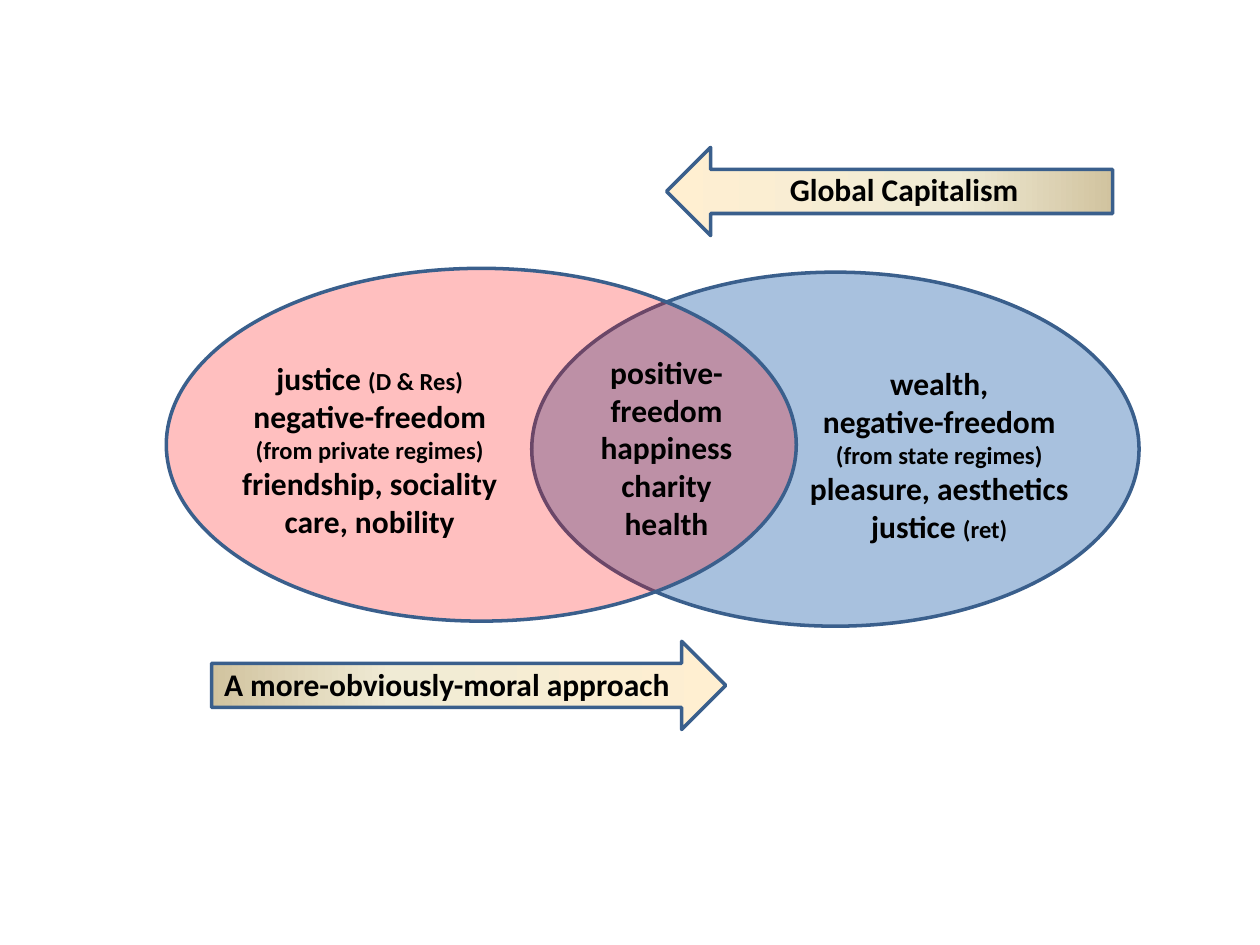
"""Build a slide with two overlapping value sets and two direction arrows."""
import pptx
import pptx.util
import pptx.dml.color
import pptx.enum.shapes
import pptx.enum.text
import pptx.oxml.ns
from lxml import etree

Inches = pptx.util.Inches
Pt = pptx.util.Pt
RGBColor = pptx.dml.color.RGBColor
SHAPE = pptx.enum.shapes.MSO_SHAPE
ALIGN = pptx.enum.text.PP_ALIGN
qn = pptx.oxml.ns.qn

BLUE = RGBColor(0x4F, 0x81, 0xBD)
RED = RGBColor(0xFF, 0x00, 0x00)
OUTLINE = RGBColor(0x3A, 0x5F, 0x8C)
BLACK = RGBColor(0x00, 0x00, 0x00)
CREAM = RGBColor(0xFF, 0xEF, 0xD1)
IVORY = RGBColor(0xF0, 0xEB, 0xD5)
TAN = RGBColor(0xD1, 0xC3, 0x9F)

LARGE, SMALL = 18, 14
ARROW_STOPS = [(0, CREAM), (65, IVORY), (100, TAN)]

ELLIPSES = [
    ((4.22, 2.16, 4.82, 2.81), BLUE, 49),
    ((1.32, 2.13, 5, 2.8), RED, 25),
]
ARROWS = [
    (SHAPE.RIGHT_ARROW, (1.68, 5.09, 4.08, 0.7), 180),
    (SHAPE.LEFT_ARROW, (5.29, 1.17, 3.54, 0.7), 0),
]
VALUE_LISTS = [
    ((6.17, 2.84, 2.57, 1.55), [
        [("wealth,", LARGE)],
        [("negative-freedom", LARGE)],
        [("(from state regimes)", SMALL)],
        [("pleasure, aesthetics", LARGE)],
        [("justice ", LARGE), ("(ret)", SMALL)],
    ]),
    ((4.58, 2.75, 1.42, 2.22), [
        [(word, LARGE)]
        for word in ("positive-", "freedom", "happiness", "charity", "health")
    ]),
    ((1.5, 2.8, 2.87, 1.55), [
        [("justice ", LARGE), ("(D & Res)", SMALL)],
        [("negative-freedom", LARGE)],
        [("(from private regimes)", SMALL)],
        [("friendship, sociality", LARGE)],
        [("care, nobility", LARGE)],
    ]),
]
ARROW_LABELS = [
    ((6.17, 1.3, 2.03, 0.4), [[("Global Capitalism", LARGE)]]),
    ((1.68, 5.23, 3.81, 0.4), [[("A more-obviously-moral approach", LARGE)]]),
]


def add_outlined(slide, kind, place):
    shape = slide.shapes.add_shape(kind, *map(Inches, place))
    shape.shadow.inherit = False
    shape.line.color.rgb = OUTLINE
    shape.line.width = Pt(2)
    return shape


def add_ellipse(slide, place, color, opacity):
    ellipse = add_outlined(slide, SHAPE.OVAL, place)
    ellipse.fill.solid()
    ellipse.fill.fore_color.rgb = color
    tint = ellipse.element.spPr.find(qn("a:solidFill")).find(qn("a:srgbClr"))
    etree.SubElement(tint, qn("a:alpha"), val=str(opacity * 1000))


def add_arrow(slide, kind, place, angle):
    arrow = add_outlined(slide, kind, place)
    arrow.fill.gradient()
    arrow.fill.gradient_angle = angle
    stops = arrow.element.spPr.find(qn("a:gradFill")).find(qn("a:gsLst"))
    stops.clear()
    for position, color in ARROW_STOPS:
        stop = etree.SubElement(stops, qn("a:gs"), pos=str(position * 1000))
        etree.SubElement(stop, qn("a:srgbClr"), val=str(color))


def add_text(slide, place, lines, align, wrap):
    box = slide.shapes.add_textbox(*map(Inches, place))
    frame = box.text_frame
    frame.word_wrap = wrap
    for index, line in enumerate(lines):
        para = frame.add_paragraph() if index else frame.paragraphs[0]
        para.alignment = align
        para.font.name = "Calibri"
        para.font.bold = True
        para.font.color.rgb = BLACK
        para.font.size = Pt(line[0][1])
        for text, size in line:
            span = para.add_run()
            span.text = text
            if size != line[0][1]:
                span.font.size = Pt(size)


def main():
    deck = pptx.Presentation()
    deck.slide_width, deck.slide_height = Inches(10), Inches(7.5)
    slide = deck.slides.add_slide(deck.slide_layouts[6])
    for place, color, opacity in ELLIPSES:
        add_ellipse(slide, place, color, opacity)
    for kind, place, angle in ARROWS:
        add_arrow(slide, kind, place, angle)
    for place, lines in VALUE_LISTS:
        add_text(slide, place, lines, ALIGN.CENTER, True)
    for place, lines in ARROW_LABELS:
        add_text(slide, place, lines, ALIGN.LEFT, False)
    deck.save("out.pptx")


if __name__ == "__main__":
    main()
